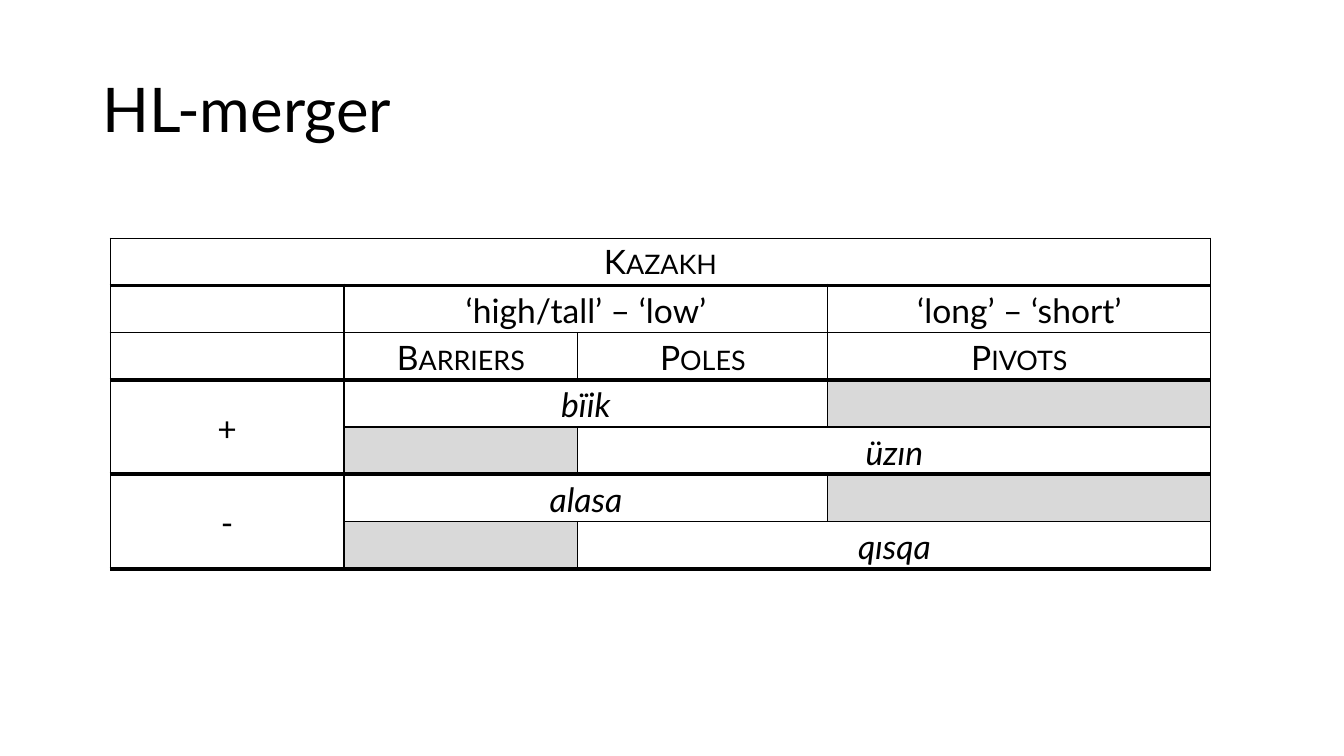
"""Build the HL-merger slide with its Kazakh dimension-term table."""
from lxml.etree import SubElement
from pptx import Presentation
from pptx.dml.color import RGBColor
from pptx.enum.text import MSO_ANCHOR, PP_ALIGN
from pptx.oxml.ns import qn
from pptx.util import Inches, Pt

COLORS = {"ink": "000000", "shade": "D9D9D9"}
FONT = "Lato"
COLUMN_SHARES = (0.174, 0.174, 0.186, 0.285)
ROW_COUNT = 7
THICK_BELOW = (0, 2, 4, 6)
SHADED = {(3, 3), (4, 1), (5, 3), (6, 1)}
SPANS = [
    ((0, 0), (0, 3)), ((1, 1), (1, 2)),
    ((3, 0), (4, 0)), ((3, 1), (3, 2)), ((4, 2), (4, 3)),
    ((5, 0), (6, 0)), ((5, 1), (5, 2)), ((6, 2), (6, 3)),
]
WORDS = {
    (0, 0): ("Kazakh", "caps"),
    (1, 1): ("‘high/tall’ – ‘low’", "plain"),
    (1, 3): ("‘long’ – ‘short’", "plain"),
    (2, 1): ("Barriers", "caps"),
    (2, 2): ("Poles", "caps"),
    (2, 3): ("Pivots", "caps"),
    (3, 0): ("+", "plain"),
    (3, 1): ("bïik", "italic"),
    (4, 2): ("üzın", "italic"),
    (5, 0): ("-", "plain"),
    (5, 1): ("alasa", "italic"),
    (6, 2): ("qısqa", "italic"),
}


def write(para, words, size, spacing, align):
    para.alignment = align
    para.line_spacing = spacing
    span = para.add_run()
    span.text = words
    span.font.name = FONT
    span.font.size = Pt(size)
    span.font.color.rgb = RGBColor.from_string(COLORS["ink"])
    return span


def add_border(cell, side, points):
    line = SubElement(cell._tc.get_or_add_tcPr(), qn(f"a:{side}"), w=str(Pt(points)))
    fill = SubElement(line, qn("a:solidFill"))
    SubElement(fill, qn("a:srgbClr"), val=COLORS["ink"])


deck = Presentation()
deck.slide_width, deck.slide_height = Inches(13.33), Inches(7.5)
wide, high = deck.slide_width, deck.slide_height
page = deck.slides.add_slide(deck.slide_layouts[5])

title = page.shapes.title
title.left, title.top = int(wide * 0.069), int(high * 0.053)
title.width, title.height = int(wide * 0.863), int(high * 0.193)
title.text_frame.vertical_anchor = MSO_ANCHOR.MIDDLE
write(title.text_frame.paragraphs[0], "HL-merger", 44, 0.9, PP_ALIGN.LEFT)

row_height = high // 16
table = page.shapes.add_table(
    ROW_COUNT, len(COLUMN_SHARES), int(wide * 0.082), int(high * 0.315),
    int(wide * sum(COLUMN_SHARES)), row_height * ROW_COUNT,
).table
table.first_row = table.horz_banding = False
for column, share in zip(table.columns, COLUMN_SHARES):
    column.width = int(wide * share)
for row in table.rows:
    row.height = row_height
for first, last in SPANS:
    table.cell(*first).merge(table.cell(*last))

for row in range(ROW_COUNT):
    for column in range(len(COLUMN_SHARES)):
        cell = table.cell(row, column)
        cell.margin_left = cell.margin_right = Inches(0.07)
        cell.margin_top = cell.margin_bottom = 0
        cell.vertical_anchor = MSO_ANCHOR.MIDDLE if row else MSO_ANCHOR.TOP
        last_row = row + cell.span_height - 1 if cell.is_merge_origin else row
        add_border(cell, "lnL", 1)
        add_border(cell, "lnR", 1)
        add_border(cell, "lnT", 3 if row - 1 in THICK_BELOW else 1)
        add_border(cell, "lnB", 3 if last_row in THICK_BELOW else 1)
        if (row, column) in SHADED:
            cell.fill.solid()
            cell.fill.fore_color.rgb = RGBColor.from_string(COLORS["shade"])
        else:
            cell.fill.background()
        if (row, column) in WORDS:
            words, style = WORDS[row, column]
            para = cell.text_frame.paragraphs[0]
            span = write(para, words, 24, 1.07, PP_ALIGN.CENTER)
            if style == "italic":
                span.font.italic = True
            if style == "caps":
                span._r.get_or_add_rPr().set("cap", "small")

deck.save("out.pptx")
